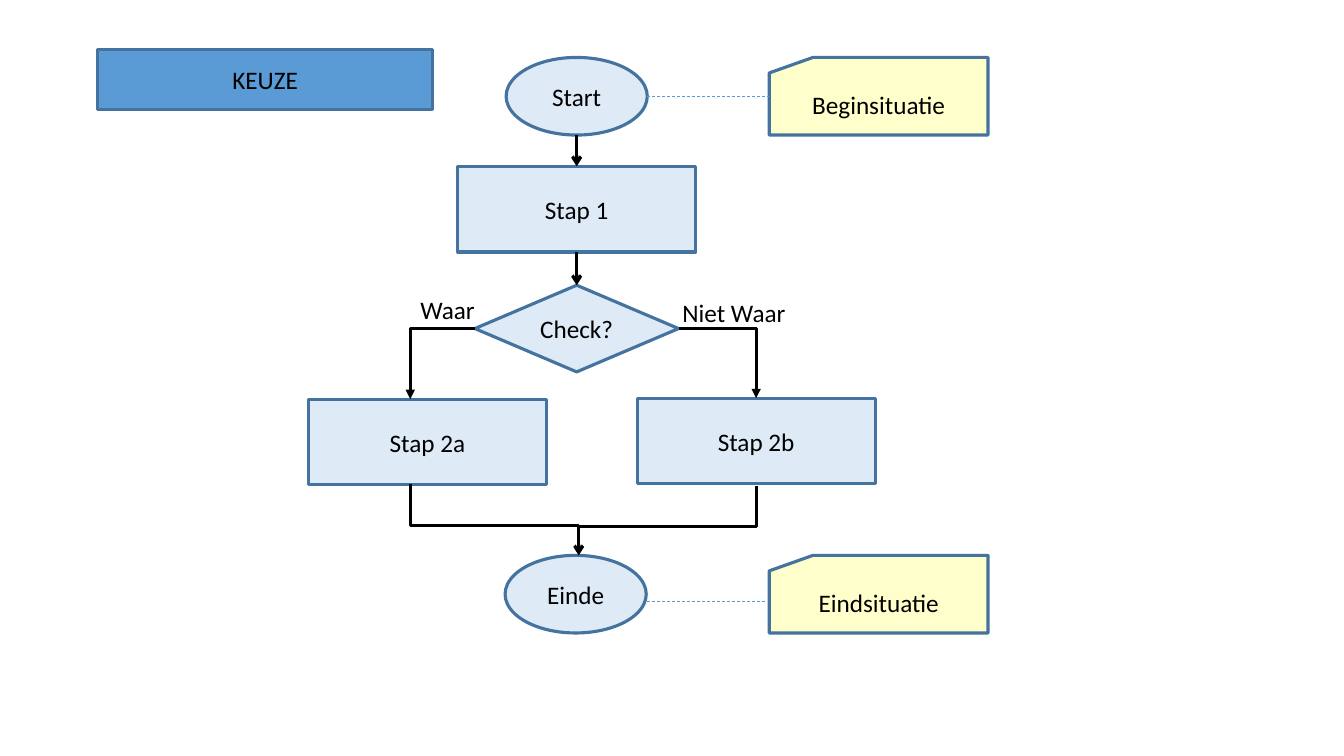
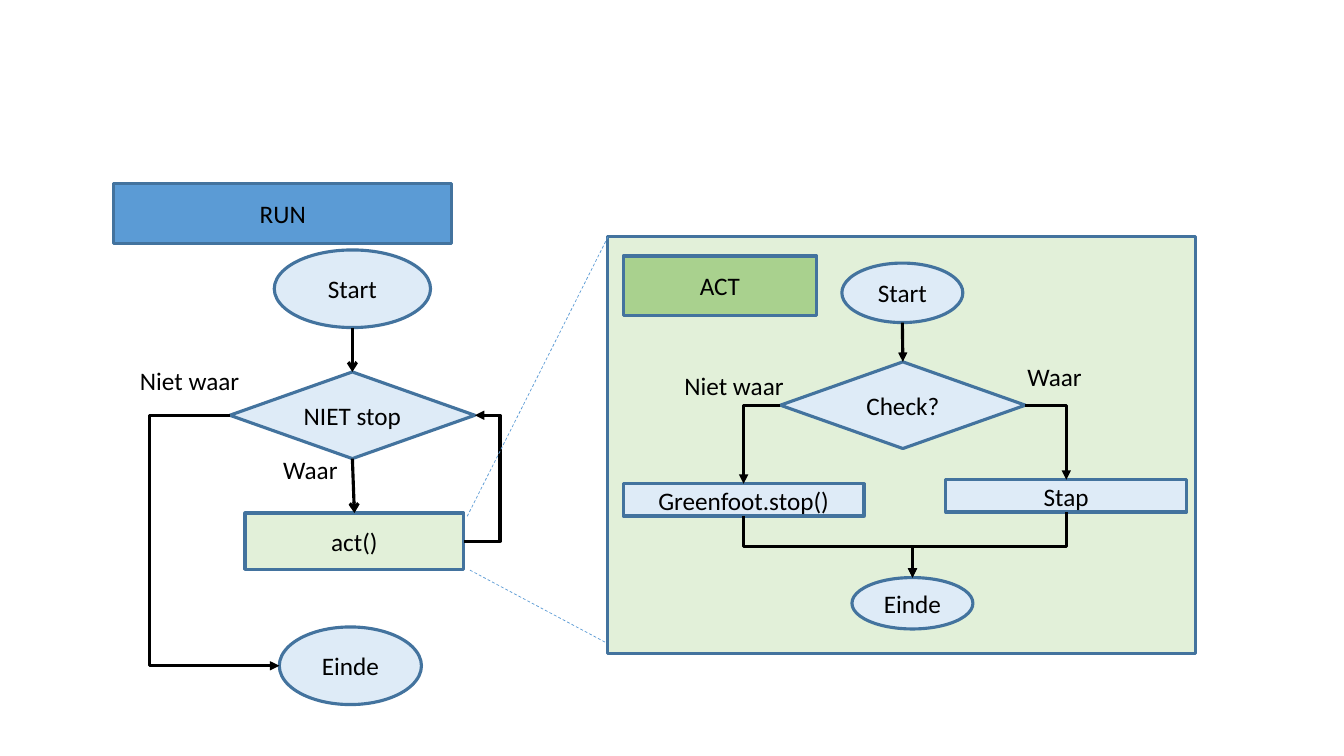
from collections import namedtuple

from lxml import etree
from pptx import Presentation
from pptx.dml.color import RGBColor
from pptx.enum.dml import MSO_LINE
from pptx.enum.shapes import MSO_CONNECTOR, MSO_SHAPE
from pptx.enum.text import MSO_ANCHOR, PP_ALIGN
from pptx.oxml.ns import qn
from pptx.util import Inches, Pt

RECT = MSO_SHAPE.RECTANGLE
OVAL = MSO_SHAPE.OVAL
RHOMB = MSO_SHAPE.DIAMOND
CARD = MSO_SHAPE.FLOWCHART_CARD
LINE = MSO_CONNECTOR.STRAIGHT
ELBOW = MSO_CONNECTOR.ELBOW
DASH = MSO_LINE.DASH
MIDDLE = MSO_ANCHOR.MIDDLE
CENTER = PP_ALIGN.CENTER

FONT = "Calibri"
BLACK = "000000"
BLUE = "5B9BD5"
EDGE = "43739E"
PALE = "DEEBF7"
CREAM = "FFFFCC"
MINT = "E2F0D9"
GREEN = "A9D18E"
TITLE_ONLY = 5

Sides = namedtuple("Sides", "top bottom left right")


def color(code):
    return RGBColor.from_string(code)


def write(frame, text):
    run = frame.paragraphs[0].add_run()
    run.text = text
    run.font.name = FONT
    run.font.size = Pt(18)
    run.font.color.rgb = color(BLACK)


def style(shape, fill, text):
    shape.fill.solid()
    shape.fill.fore_color.rgb = color(fill)
    shape.line.color.rgb = color(EDGE)
    shape.line.width = Pt(2.25)
    if text:
        frame = shape.text_frame
        frame.word_wrap = True
        frame.vertical_anchor = MIDDLE
        frame.paragraphs[0].alignment = CENTER
        write(frame, text)


class Area:
    def __init__(self, slide, left, top):
        self.slide, self.left, self.top = slide, left, top

    def spot(self, x, y):
        return Inches(self.left + x), Inches(self.top + y)

    def title(self, text, width, height):
        shape = self.slide.shapes.title
        shape.left, shape.top = self.spot(0, 0)
        shape.width, shape.height = Inches(width), Inches(height)
        style(shape, BLUE, text)

    def node(self, kind, text, x, y, wide, high, fill=PALE):
        shape = self.slide.shapes.add_shape(
            kind, *self.spot(x, y), Inches(wide), Inches(high))
        shape.shadow.inherit = False
        style(shape, fill, text)
        mid_x, mid_y = x + wide / 2, y + high / 2
        return Sides((mid_x, y), (mid_x, y + high),
                     (x, mid_y), (x + wide, mid_y))

    def label(self, text, x, y, wide):
        box = self.slide.shapes.add_textbox(
            *self.spot(x, y), Inches(wide), Inches(0.4))
        box.text_frame.word_wrap = False
        write(box.text_frame, text)

    def draw(self, kind, start, end, tip=None, tone=BLACK, width=2.25):
        link = self.slide.shapes.add_connector(
            kind, *self.spot(*start), *self.spot(*end))
        link.line.color.rgb = color(tone)
        link.line.width = Pt(width)
        props = link._element.spPr
        if tip:
            etree.SubElement(props.find(qn("a:ln")), qn("a:tailEnd"), type=tip)
        etree.SubElement(props, qn("a:effectLst"))
        return link

    def arrow(self, start, end, tip="arrow"):
        self.draw(LINE, start, end, tip)

    def dash(self, start, end):
        self.draw(LINE, start, end, tone=BLUE, width=0.5).line.dash_style = DASH

    def bend(self, start, end, turn=None, down=False, tip="triangle"):
        (x1, y1), (x2, y2) = start, end
        first, last = (y1, y2) if down else (x1, x2)
        if down:
            mid_x, mid_y = (x1 + x2) / 2, (y1 + y2) / 2
            half_x, half_y = (y2 - y1) / 2, (x1 - x2) / 2
            start = mid_x - half_x, mid_y - half_y
            end = mid_x + half_x, mid_y + half_y
        props = self.draw(ELBOW, start, end, tip)._element.spPr
        if down:
            props.find(qn("a:xfrm")).set("rot", "5400000")
        shape = props.find(qn("a:prstGeom"))
        if turn is None:
            shape.set("prst", "bentConnector2")
        else:
            ratio = round((turn - first) / (last - first) * 100000)
            etree.SubElement(shape.find(qn("a:avLst")), qn("a:gd"),
                             name="adj1", fmla=f"val {ratio}")


def choice(slide, left, top):
    area = Area(slide, left, top)
    oval, step, card = (1.4, 0.77), (2.36, 0.85), (2.17, 0.77)
    start = area.node(OVAL, "Start", 1.96, 0, *oval)
    first = area.node(RECT, "Stap 1", 1.48, 1.08, *step)
    check = area.node(RHOMB, "Check?", 1.65, 2.26, 2.02, 0.86)
    area.node(RECT, "Stap 2a", 0, 3.39, *step)
    area.node(RECT, "Stap 2b", 3.26, 3.38, *step)
    area.node(OVAL, "Einde", 1.95, 4.94, *oval)
    begin = area.node(CARD, "Beginsituatie", 4.57, 0, *card, CREAM)
    area.node(CARD, "Eindsituatie", 4.57, 4.94, *card, CREAM)
    area.arrow(start.bottom, first.top)
    area.arrow(first.bottom, check.top)
    area.dash(start.right, begin.left)
    area.dash((3.36, 5.4), (4.54, 5.4))
    area.bend(check.left, (1.01, 3.39))
    area.bend(check.right, (4.44, 3.38))
    area.bend((1.01, 4.23), (2.68, 4.94), 4.64, down=True, tip="arrow")
    area.bend((4.44, 4.25), (2.68, 4.65), down=True, tip=None)
    area.label("Waar", 1.01, 2.3, 0.74)
    area.label("Niet Waar", 3.61, 2.33, 1.22)


def loop(slide, left, top):
    area = Area(slide, left, top)
    area.title("RUN", 3.35, 0.6)
    start = area.node(OVAL, "Start", 1.59, 0.66, 1.55, 0.77)
    check = area.node(RHOMB, "NIET stop", 1.15, 1.87, 2.43, 0.86)
    act = area.node(RECT, "act()", 1.3, 3.27, 2.17, 0.56, MINT)
    end = area.node(OVAL, "Einde", 1.64, 4.4, 1.41, 0.77)
    area.arrow(start.bottom, check.top)
    area.arrow(check.bottom, act.top)
    area.bend(act.right, check.right, 3.83)
    area.bend(check.left, end.left, 0.35)
    area.label("Niet waar", 0.16, 1.76, 1.2)
    area.label("Waar", 1.58, 2.64, 0.75)


def detail(slide, left, top):
    area = Area(slide, left, top)
    step = 2.39, 0.32
    area.node(RECT, "", 0, 0, 5.83, 4.13, MINT)
    area.node(RECT, "ACT", 0.15, 0.19, 1.92, 0.59, GREEN)
    start = area.node(OVAL, "Start", 2.32, 0.26, 1.2, 0.59)
    check = area.node(RHOMB, "Check?", 1.71, 1.24, 2.43, 0.86)
    stop = area.node(RECT, "Greenfoot.stop()", 0.15, 2.45, *step)
    move = area.node(RECT, "Stap", 3.35, 2.41, *step)
    end = area.node(OVAL, "Einde", 2.42, 3.38, 1.2, 0.51)
    area.arrow(start.bottom, check.top, "triangle")
    area.bend(check.left, stop.top)
    area.bend(check.right, move.top)
    for item in (stop, move):
        area.bend(item.bottom, end.top, 3.07, down=True)
    area.dash((0, 0), (-1.4, 2.78))
    area.dash((-0.03, 4.02), (-1.38, 3.3))
    area.label("Niet waar", 0.66, 1.27, 1.2)
    area.label("Waar", 4.06, 1.19, 0.75)


def main():
    deck = Presentation()
    deck.slide_width, deck.slide_height = Inches(13.33), Inches(7.5)
    layout = deck.slide_layouts[TITLE_ONLY]
    slide = deck.slides.add_slide(layout)
    Area(slide, 0.97, 0.49).title("KEUZE", 3.32, 0.6)
    choice(slide, 3.06, 0.57)
    slide = deck.slides.add_slide(layout)
    loop(slide, 1.13, 1.82)
    detail(slide, 6.03, 2.35)
    deck.save("out.pptx")


if __name__ == "__main__":
    main()
